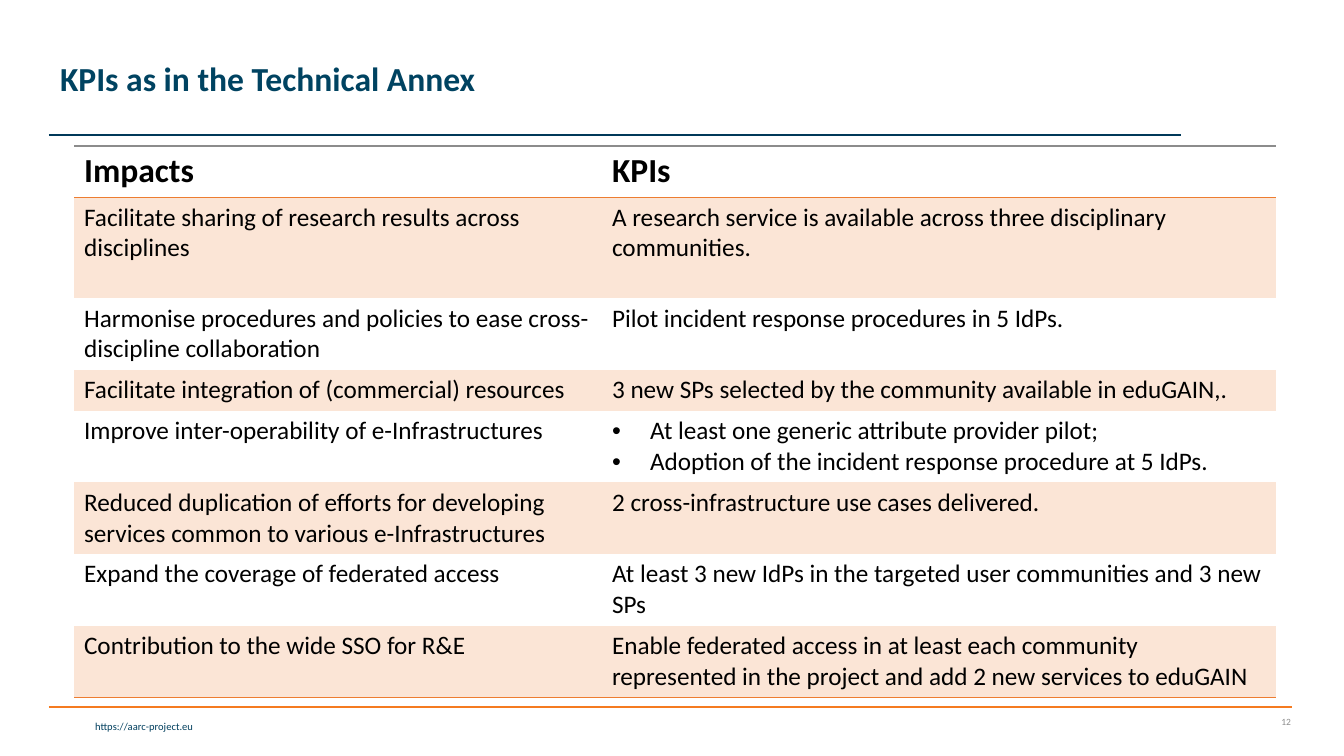
"""Build the slide of impacts and KPIs from the Technical Annex."""
from dataclasses import dataclass

import pptx
import pptx.dml.color
import pptx.enum.shapes
import pptx.enum.text
import pptx.oxml
import pptx.oxml.ns
import pptx.util
from lxml import etree

TITLE = "KPIs as in the Technical Annex"
SITE = "https://aarc-project.eu"
PAGE = "12"
HEADINGS = ("Impacts", "KPIs")
IMPACTS = [
    ("Facilitate sharing of research results across disciplines",
     ["A research service is available across three disciplinary communities."], 101),
    ("Harmonise procedures and policies to ease cross-discipline collaboration",
     ["Pilot incident response procedures in 5 IdPs."], 71),
    ("Facilitate integration of (commercial) resources",
     ["3 new SPs selected by the community available in eduGAIN,."], 40),
    ("Improve inter-operability of e-Infrastructures",
     ["At least one generic attribute provider pilot;",
      "Adoption of the incident response procedure at 5 IdPs."], 71),
    ("Reduced duplication of efforts for developing services common to various e-Infrastructures",
     ["2 cross-infrastructure use cases delivered."], 71),
    ("Expand the coverage of federated access",
     ["At least 3 new IdPs in the targeted user communities and 3 new SPs"], 71),
    ("Contribution to the wide SSO for R&E",
     ["Enable federated access in at least each community represented in the project"
      " and add 2 new services to eduGAIN"], 70),
]
HEADING_HEIGHT = 50
COLUMN_WIDTHS = (528, 674)
TABLE_LEFT, TABLE_TOP = 74, 146
BULLET_INDENT = 38


@dataclass(frozen=True)
class Theme:
    font: str = "Calibri"
    title: str = "004361"
    text: str = "000000"
    site: str = "003F5E"
    page: str = "8C8C8C"
    top_rule: str = "003959"
    bottom_rule: str = "F57B20"
    table_rule: str = "ED7D31"
    table_top: str = "8C8C8C"
    band: str = "FBE5D6"
    heading_size: float = 24
    body_size: float = 18
    site_size: float = 7.5
    page_size: float = 6.8


THEME = Theme()


def px(length):
    return pptx.util.Emu(round(length * 914400 / 100.8))


def rgb(value):
    return pptx.dml.color.RGBColor.from_string(value)


def style(paragraph, size, color, bold=False):
    for run in paragraph.runs:
        run.font.name = THEME.font
        run.font.size = pptx.util.Pt(size)
        run.font.bold = bold
        run.font.color.rgb = rgb(color)


def add_rule(slide, left, right, y, color):
    rule = slide.shapes.add_connector(
        pptx.enum.shapes.MSO_CONNECTOR.STRAIGHT, px(left), px(y), px(right), px(y))
    rule.line.color.rgb = rgb(color)
    rule.line.width = pptx.util.Pt(1)
    etree.SubElement(rule._element.spPr, pptx.oxml.ns.qn("a:effectLst"))


def add_label(slide, text, box, size, color, anchor):
    frame = slide.shapes.add_textbox(*map(px, box)).text_frame
    frame.word_wrap = True
    frame.vertical_anchor = anchor
    frame.text = text
    frame.paragraphs[0].alignment = pptx.enum.text.PP_ALIGN.RIGHT
    style(frame.paragraphs[0], size, color)


def add_bullet(paragraph):
    properties = paragraph._p.get_or_add_pPr()
    properties.set("marL", str(px(BULLET_INDENT)))
    properties.set("indent", str(-px(BULLET_INDENT)))
    etree.SubElement(properties, pptx.oxml.ns.qn("a:buFont"), typeface="Arial")
    etree.SubElement(properties, pptx.oxml.ns.qn("a:buChar"), char="•")


def add_border(cell, side, color):
    border = pptx.oxml.parse_xml(
        f'<a:{side} {pptx.oxml.ns.nsdecls("a")} w="12700"><a:solidFill>'
        f'<a:srgbClr val="{color}"/></a:solidFill></a:{side}>')
    properties = cell._tc.get_or_add_tcPr()
    position = len(properties.findall(pptx.oxml.ns.qn("a:lnT")))
    properties.insert(position, border)


def fill_cell(cell, lines, size, bold, band):
    cell.text = "\n".join(lines)
    for paragraph in cell.text_frame.paragraphs:
        if len(lines) > 1:
            add_bullet(paragraph)
        style(paragraph, size, THEME.text, bold)
    if band:
        cell.fill.solid()
        cell.fill.fore_color.rgb = rgb(THEME.band)
    else:
        cell.fill.background()


def add_impacts(slide):
    heights = [HEADING_HEIGHT] + [height for *_, height in IMPACTS]
    rows = [[[heading] for heading in HEADINGS]]
    rows += [[[impact], kpis] for impact, kpis, _ in IMPACTS]
    table = slide.shapes.add_table(
        len(rows), len(HEADINGS), px(TABLE_LEFT), px(TABLE_TOP),
        px(sum(COLUMN_WIDTHS)), px(sum(heights))).table
    table.horz_banding = False
    style_id = table._tbl.tblPr.find(pptx.oxml.ns.qn("a:tableStyleId"))
    style_id.text = "{2D5ABB26-0587-4C30-8999-92F81FD0307C}"
    for column, width in zip(table.columns, COLUMN_WIDTHS):
        column.width = px(width)
    for index, (row, height, contents) in enumerate(zip(table.rows, heights, rows)):
        row.height = px(height)
        heading = index == 0
        size = THEME.heading_size if heading else THEME.body_size
        for cell, lines in zip(row.cells, contents):
            fill_cell(cell, lines, size, heading, index % 2 == 1)
            if heading:
                add_border(cell, "lnT", THEME.table_top)
            if heading or index == len(rows) - 1:
                add_border(cell, "lnB", THEME.table_rule)


def add_title(slide):
    title = slide.shapes.title
    title.left, title.top, title.width, title.height = map(px, (50, 8, 1060, 146))
    frame = title.text_frame
    frame.text = TITLE
    frame.word_wrap = True
    frame.vertical_anchor = pptx.enum.text.MSO_ANCHOR.MIDDLE
    frame.paragraphs[0].alignment = pptx.enum.text.PP_ALIGN.LEFT
    frame.paragraphs[0].line_spacing = 0.9
    style(frame.paragraphs[0], THEME.heading_size, THEME.title, True)


def main():
    deck = pptx.Presentation()
    deck.slide_width, deck.slide_height = px(1344), px(756)
    slide = deck.slides.add_slide(deck.slide_layouts[5])
    anchors = pptx.enum.text.MSO_ANCHOR
    add_title(slide)
    add_rule(slide, 49, 1181, 135, THEME.top_rule)
    add_rule(slide, 49, 1292, 707, THEME.bottom_rule)
    add_impacts(slide)
    add_label(slide, SITE, (3, 715, 200, 23), THEME.site_size, THEME.site, anchors.TOP)
    add_label(slide, PAGE, (1220, 707, 81, 30), THEME.page_size, THEME.page, anchors.MIDDLE)
    deck.save("out.pptx")


if __name__ == "__main__":
    main()
